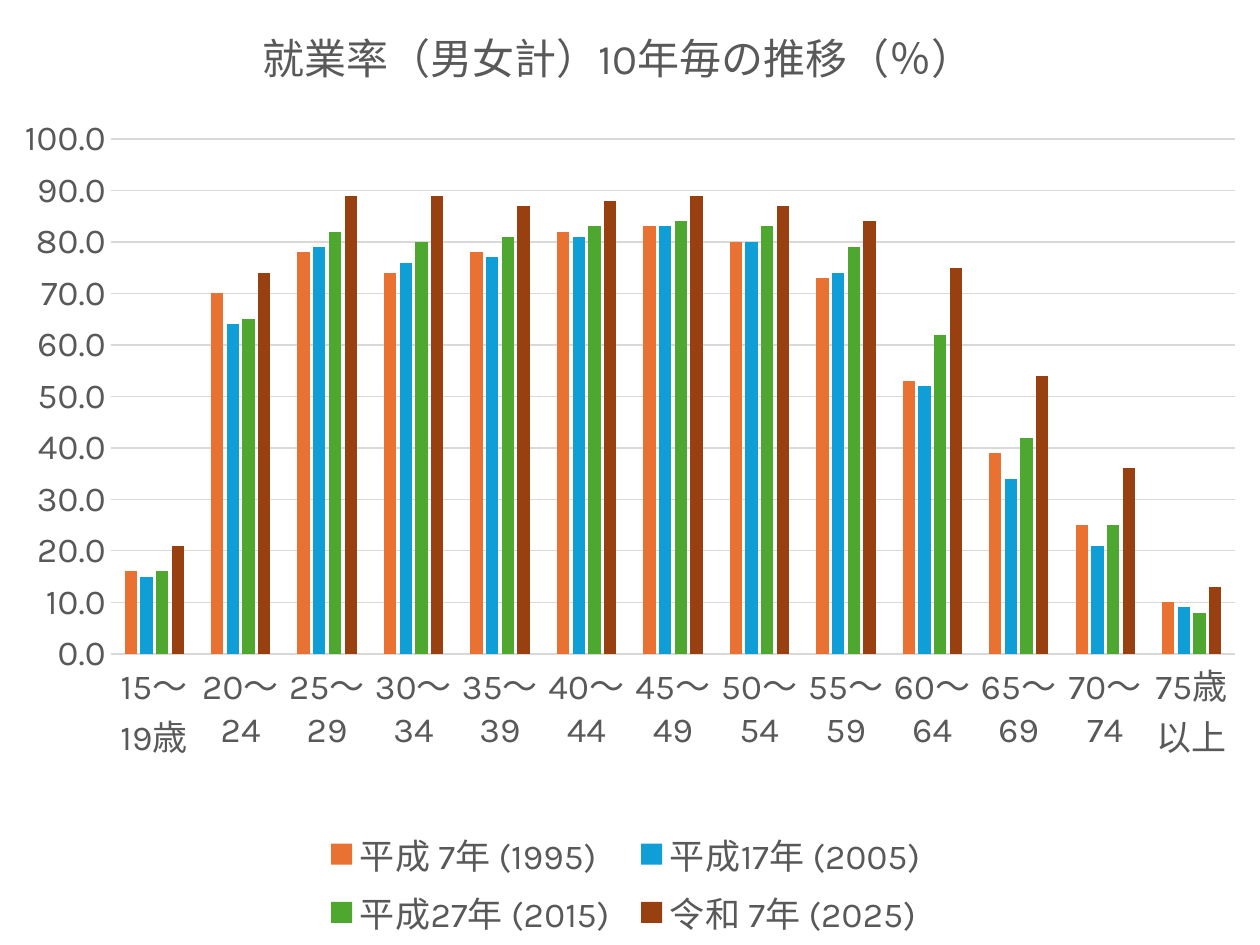
from dataclasses import dataclass

from lxml.etree import SubElement
from pptx import Presentation
from pptx.chart.chart import Chart
from pptx.chart.data import CategoryChartData
from pptx.dml.color import RGBColor
from pptx.enum.chart import XL_CHART_TYPE, XL_LEGEND_POSITION, XL_TICK_MARK
from pptx.oxml.ns import qn
from pptx.util import Emu, Pt

PX_PER_INCH = 126
SLIDE_WIDTH, SLIDE_HEIGHT = 1260, 945
FONT = "Karla"
COLORS = {
    "text": "595959",
    "grid": "D9D9D9",
    "1995": "E97132",
    "2005": "0F9ED5",
    "2015": "4EA72E",
    "2025": "994010",
}
AGE_GROUPS = [
    "15～19歳",
    *(f"{start}～{start + 4}" for start in range(20, 75, 5)),
    "75歳以上",
]


@dataclass(frozen=True)
class SurveyYear:
    era: str
    year: str
    rates: tuple[int, ...]


@dataclass(frozen=True)
class Area:
    left: int
    top: int
    width: int
    height: int


TITLE_LEFT, TITLE_TOP = 255, 13
PLOT = Area(111, 139, 1124, 515)
SURVEYS = [
    SurveyYear("平成 7年", "1995",
               (16, 70, 78, 74, 78, 82, 83, 80, 73, 53, 39, 25, 10)),
    SurveyYear("平成17年", "2005",
               (15, 64, 79, 76, 77, 81, 83, 80, 74, 52, 34, 21, 9)),
    SurveyYear("平成27年", "2015",
               (16, 65, 82, 80, 81, 83, 84, 83, 79, 62, 42, 25, 8)),
    SurveyYear("令和 7年", "2025",
               (21, 74, 89, 89, 87, 88, 89, 87, 84, 75, 54, 36, 13)),
]


def px(length: int) -> Emu:
    return Emu(round(length * 914400 / PX_PER_INCH))


def color(name: str) -> RGBColor:
    return RGBColor.from_string(COLORS[name])


def style_font(font, size: int = 20) -> None:
    font.name = FONT
    font.size = Pt(size)
    font.bold = False
    font.color.rgb = color("text")


def style_line(line) -> None:
    line.color.rgb = color("grid")
    line.width = Pt(0.75)


def set_layout(layout, settings: dict) -> None:
    for child in list(layout):
        layout.remove(child)
    manual = SubElement(layout, qn("c:manualLayout"))
    for tag, value in settings.items():
        SubElement(manual, qn(f"c:{tag}")).set("val", str(value))


def edge_position(left: int, top: int) -> dict:
    return {
        "xMode": "edge",
        "yMode": "edge",
        "x": left / SLIDE_WIDTH,
        "y": top / SLIDE_HEIGHT,
    }


def add_title(chart: Chart) -> None:
    chart.has_title = True
    chart.chart_title.include_in_layout = False
    heading = chart.chart_title.text_frame.paragraphs[0].add_run()
    heading.text = "就業率（男女計）10年毎の推移（％）"
    style_font(heading.font, 24)
    title = chart.element.find(".//" + qn("c:title"))
    layout = title.find(qn("c:layout"))
    if layout is None:
        layout = SubElement(title, qn("c:layout"))
        title.find(qn("c:tx")).addnext(layout)
    set_layout(layout, edge_position(TITLE_LEFT, TITLE_TOP))


def style_axes(chart: Chart) -> None:
    for axis in (chart.category_axis, chart.value_axis):
        axis.major_tick_mark = XL_TICK_MARK.NONE
        axis.minor_tick_mark = XL_TICK_MARK.NONE
        style_font(axis.tick_labels.font)
    style_line(chart.category_axis.format.line)

    rate_axis = chart.value_axis
    rate_axis.minimum_scale, rate_axis.maximum_scale = 0, 100
    rate_axis.major_unit = 10
    rate_axis.format.line.fill.background()
    rate_axis.has_major_gridlines = True
    style_line(rate_axis.major_gridlines.format.line)
    rate_axis.tick_labels.number_format = "0.0"
    rate_axis.tick_labels.number_format_is_linked = False


def style_bars(chart: Chart) -> None:
    bars = chart.plots[0]
    bars.gap_width = 219
    bars.overlap = -27
    bars.vary_by_categories = False
    for series, survey in zip(bars.series, SURVEYS):
        series.format.fill.solid()
        series.format.fill.fore_color.rgb = color(survey.year)
        series.invert_if_negative = False


def add_legend(chart: Chart) -> None:
    chart.has_legend = True
    chart.legend.position = XL_LEGEND_POSITION.BOTTOM
    chart.legend.include_in_layout = False
    style_font(chart.legend.font)


def place_plot(chart: Chart, area: Area) -> None:
    plot_area = chart.element.find(".//" + qn("c:plotArea"))
    layout = plot_area.find(qn("c:layout"))
    if layout is None:
        layout = SubElement(plot_area, qn("c:layout"))
        plot_area.insert(0, layout)
    set_layout(layout, {
        "layoutTarget": "inner",
        **edge_position(area.left, area.top),
        "w": area.width / SLIDE_WIDTH,
        "h": area.height / SLIDE_HEIGHT,
    })


def main() -> None:
    presentation = Presentation()
    presentation.slide_width = px(SLIDE_WIDTH)
    presentation.slide_height = px(SLIDE_HEIGHT)
    slide = presentation.slides.add_slide(presentation.slide_layouts[6])

    employment = CategoryChartData(number_format="0.0")
    employment.categories = AGE_GROUPS
    for survey in SURVEYS:
        employment.add_series(f"{survey.era} ({survey.year}) ", survey.rates)
    chart = slide.shapes.add_chart(
        XL_CHART_TYPE.COLUMN_CLUSTERED,
        px(0), px(0), px(SLIDE_WIDTH), px(SLIDE_HEIGHT),
        employment,
    ).chart
    style_font(chart.font)
    add_title(chart)
    style_axes(chart)
    style_bars(chart)
    add_legend(chart)
    place_plot(chart, PLOT)
    presentation.save("out.pptx")


if __name__ == "__main__":
    main()
